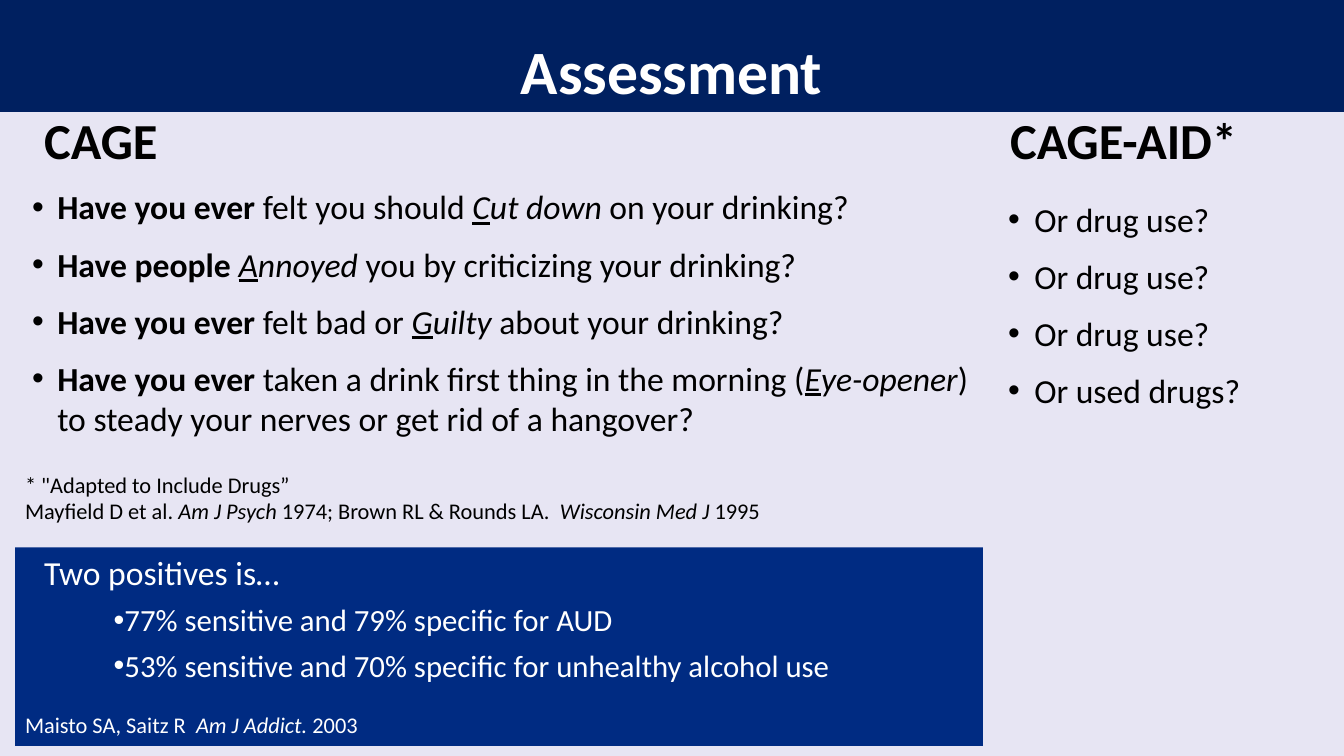
from lxml import etree
from pptx import Presentation
from pptx.dml.color import RGBColor
from pptx.enum.shapes import MSO_SHAPE
from pptx.enum.text import MSO_ANCHOR, PP_ALIGN
from pptx.oxml.ns import qn
from pptx.util import Inches, Pt

TOP, MIDDLE, BOTTOM = MSO_ANCHOR.TOP, MSO_ANCHOR.MIDDLE, MSO_ANCHOR.BOTTOM
LEFT, CENTER = PP_ALIGN.LEFT, PP_ALIGN.CENTER
RECT = MSO_SHAPE.RECTANGLE
LILAC = RGBColor(0xE7, 0xE5, 0xF3)
NAVY = RGBColor(0x00, 0x20, 0x60)
BLUE = RGBColor(0x00, 0x2B, 0x82)
BLACK = RGBColor(0, 0, 0)
WHITE = RGBColor(255, 255, 255)

deck = Presentation()
deck.slide_width, deck.slide_height = Inches(13.33), Inches(7.5)
slide = deck.slides.add_slide(deck.slide_layouts[6])
slide.background.fill.solid()
slide.background.fill.fore_color.rgb = LILAC


def add_box(left, top, width, height, fill=None, anchor=TOP):
    """Add a text box, or a filled rectangle, and return its text frame."""
    area = [Inches(n) for n in (left, top, width, height)]
    if fill is None:
        box = slide.shapes.add_textbox(*area)
    else:
        box = slide.shapes.add_shape(RECT, *area)
        box.shadow.inherit = False
        box.fill.solid()
        box.fill.fore_color.rgb = fill
        box.line.fill.background()
    frame = box.text_frame
    frame.word_wrap = True
    frame.vertical_anchor = anchor
    return frame


def write(frame, *runs, size=24, color=BLACK, align=LEFT, before=0,
          spacing=1.0, margin=0, indent=0, bullet=False):
    """Add a paragraph of (text, style) runs; style letters are b, i and u."""
    para = frame.paragraphs[0]
    if para.runs:
        para = frame.add_paragraph()
    para.alignment = align
    para.space_before = Pt(before)
    para.line_spacing = spacing
    props = para._p.get_or_add_pPr()
    props.set("marL", str(Inches(margin)))
    props.set("indent", str(Inches(indent)))
    if bullet:
        etree.SubElement(props, qn("a:buFont")).set("typeface", "Arial")
        etree.SubElement(props, qn("a:buChar")).set("char", "•")
    for text, style in runs:
        run = para.add_run()
        run.text = text
        font = run.font
        font.name, font.size, font.color.rgb = "Calibri", Pt(size), color
        font.bold, font.italic, font.underline = (k in style for k in "biu")


# Banner
banner = add_box(0, 0, 13.33, 1.11, fill=NAVY, anchor=BOTTOM)
write(banner, ("Assessment", "b"), size=44, color=WHITE, align=CENTER)

# Column heads
for left, width, head in [(0.34, 4, "CAGE"), (9.92, 3.2, "CAGE-AID*")]:
    write(add_box(left, 0.92, width, 1, anchor=MIDDLE), (head, "b"),
          size=36, spacing=0.9)

# CAGE questions: opening, lead-in, key letter, rest of key word, ending
asks = [
    ("Have you ever ", "felt you should ", "C", "ut down ",
     "on your drinking?"),
    ("Have people ", "", "A", "nnoyed ",
     "you by criticizing your drinking?"),
    ("Have you ever ", "felt bad or ", "G", "uilty",
     " about your drinking?"),
    ("Have you ever ", "taken a drink first thing in the morning (", "E",
     "ye-opener", ") to steady your nerves or get rid of a hangover?"),
]
cage = add_box(0.22, 1.8, 9.63, 3.24)
for ask in asks:
    runs = [pair for pair in zip(ask, ("b", "", "iu", "i", "")) if pair[0]]
    write(cage, *runs, before=12, margin=0.25, indent=-0.25, bullet=True)

# Drug questions
drugs = add_box(9.9, 1.92, 3.09, 2.48)
for ask in ["Or drug use?"] * 3 + ["Or used drugs?"]:
    write(drugs, (ask, ""), before=12, margin=0.26, indent=-0.26, bullet=True)

# Footnote
note = add_box(0.15, 4.62, 12.44, 0.64)
write(note, ("* \"Adapted to Include Drugs”", ""), size=16)
write(note, ("Mayfield D et al. ", ""), ("Am J Psych ", "i"),
      ("1974; Brown RL & Rounds LA.  ", ""), ("Wisconsin Med J ", "i"),
      ("1995", ""), size=16)

# Accuracy panel
panel = add_box(0.15, 5.43, 9.6, 1.97, fill=BLUE)
write(panel, ("Two positives is…", ""), color=WHITE, before=6, margin=0.19)
for fact in ["77% sensitive and 79% specific for AUD",
             "53% sensitive and 70% specific for unhealthy alcohol use"]:
    write(panel, (fact, ""), size=22, color=WHITE, before=6,
          margin=0.63, indent=0.25, bullet=True)
write(panel, ("Maisto SA, Saitz R  ", ""), ("Am J Addict. ", "i"),
      ("2003", ""), size=16, color=WHITE, before=20)

deck.save("out.pptx")
